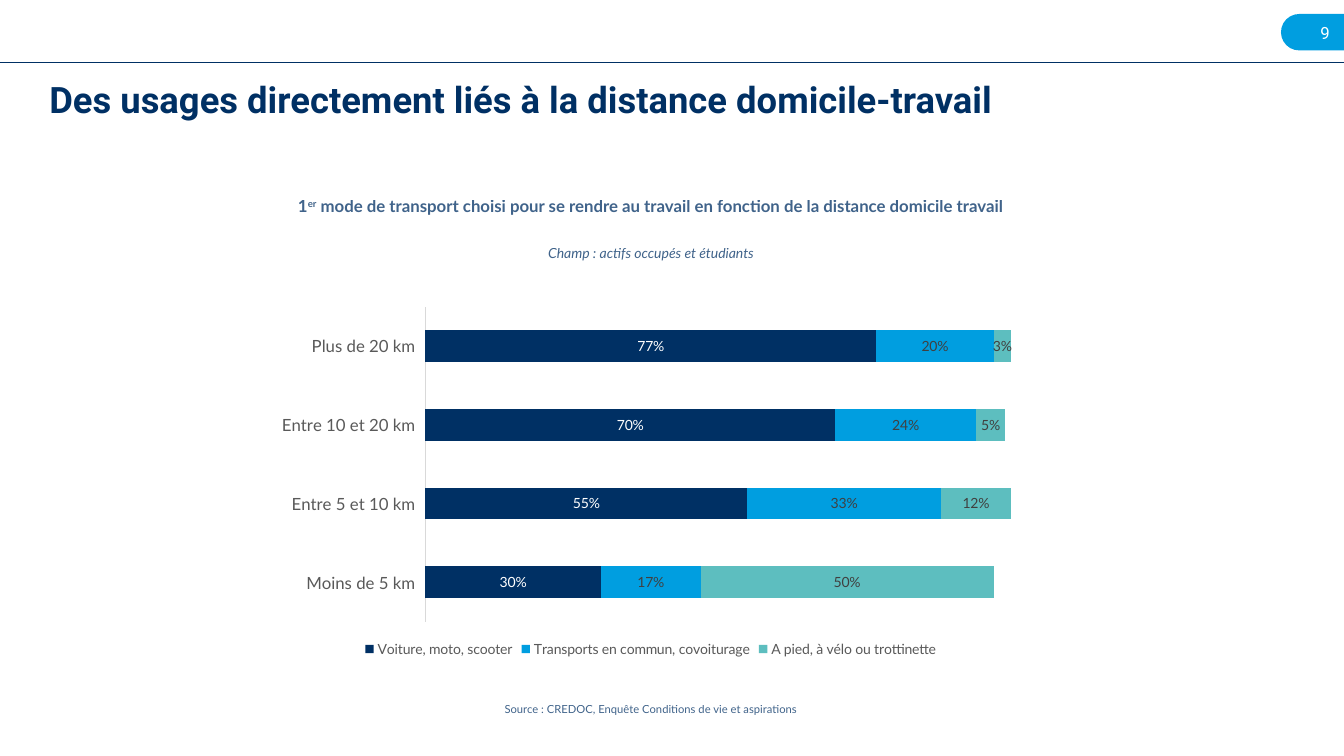
from lxml import etree
from pptx import Presentation
from pptx.chart.data import CategoryChartData
from pptx.dml.color import RGBColor
from pptx.enum.chart import XL_CHART_TYPE, XL_LABEL_POSITION, XL_LEGEND_POSITION, XL_TICK_LABEL_POSITION, XL_TICK_MARK
from pptx.enum.shapes import MSO_CONNECTOR, MSO_SHAPE
from pptx.enum.text import MSO_ANCHOR, PP_ALIGN
from pptx.oxml import parse_xml
from pptx.oxml.ns import nsdecls, qn
from pptx.util import Pt

LEFT, CENTER, RIGHT = PP_ALIGN.LEFT, PP_ALIGN.CENTER, PP_ALIGN.RIGHT
NO_TICK = XL_TICK_MARK.NONE

THEME = {
    "navy": RGBColor(0x00, 0x30, 0x64),
    "blue": RGBColor(0x00, 0x9E, 0xE0),
    "teal": RGBColor(0x5D, 0xBE, 0xBF),
    "white": RGBColor(0xFF, 0xFF, 0xFF),
    "grey": RGBColor(0x59, 0x59, 0x59),
    "dark": RGBColor(0x40, 0x40, 0x40),
    "axis": RGBColor(0xD9, 0xD9, 0xD9),
    "heading": "Roboto",
    "body": "Lato",
    "title_size": Pt(26),
    "label_size": Pt(12),
    "small_size": Pt(10),
    "source_size": Pt(8),
}


def write(sp, *texts, size, font=THEME["body"], color=THEME["navy"], align=CENTER,
          bold=False, italic=False, spacing=0.9, alpha=None, superscript=None):
    tf = sp.text_frame
    tf.word_wrap = True
    tf.vertical_anchor = MSO_ANCHOR.TOP
    p = tf.paragraphs[0]
    p.alignment = align
    p.line_spacing = spacing
    p.space_before = Pt(0)
    for text in texts:
        r = p.add_run()
        r.text = text
        f = r.font
        f.name, f.size, f.bold, f.italic = font, size, bold, italic
        f.color.rgb = color
        rPr = r._r.get_or_add_rPr()
        if text == superscript:
            rPr.set("baseline", "30000")
        if alpha:
            clr = rPr.find(qn("a:solidFill")).find(qn("a:srgbClr"))
            etree.SubElement(clr, qn("a:alpha")).set("val", str(alpha * 1000))


def style(font, size, color):
    font.name, font.size = THEME["body"], size
    font.color.rgb = color


prs = Presentation()
prs.slide_width, prs.slide_height = Pt(960), Pt(540)
s = prs.slides.add_slide(prs.slide_layouts[5])

pill = s.shapes.add_shape(MSO_SHAPE.ROUNDED_RECTANGLE, Pt(915), Pt(10), Pt(145.5), Pt(26))
pill.adjustments[0] = 0.5
pill.shadow.inherit = False
pill.fill.solid()
pill.fill.fore_color.rgb = THEME["blue"]
pill.line.fill.background()

number = s.shapes.add_textbox(Pt(914.5), Pt(13), Pt(42.5), Pt(24))
write(number, "9", size=THEME["label_size"], font=THEME["heading"],
      color=THEME["white"], align=RIGHT, spacing=1.0)

rule = s.shapes.add_connector(MSO_CONNECTOR.STRAIGHT, Pt(0), Pt(44.6), Pt(960), Pt(44.6))
rule.line.color.rgb = THEME["navy"]
rule.line.width = Pt(1)
etree.SubElement(rule._element.spPr, qn("a:effectLst"))

title = s.shapes.title
title.left, title.top, title.width, title.height = Pt(28), Pt(54.7), Pt(885.5), Pt(60.5)
write(title, "Des usages directement liés à la distance domicile-travail",
      size=THEME["title_size"], font=THEME["heading"], align=LEFT, bold=True)

captions = [
    (138, ("1", "er", " mode de transport choisi pour se rendre au travail en fonction de la distance domicile travail"),
     {"size": THEME["label_size"], "bold": True, "superscript": "er"}),
    (172.5, ("Champ : actifs occupés et étudiants",), {"size": THEME["small_size"], "italic": True}),
    (499.5, ("Source : CREDOC, Enquête Conditions de vie et aspirations",), {"size": THEME["source_size"]}),
]
for top, texts, fmt in captions:
    caption = s.shapes.add_textbox(Pt(196), Pt(top), Pt(538), Pt(20))
    write(caption, *texts, alpha=75, **fmt)

cd = CategoryChartData(number_format="0%")
cd.categories = ["Moins de 5 km", "Entre 5 et 10 km", "Entre 10 et 20 km", "Plus de 20 km"]
series = [
    ("Voiture, moto, scooter", (0.30, 0.55, 0.70, 0.77), "navy", "white"),
    ("Transports en commun, covoiturage", (0.17, 0.33, 0.24, 0.20), "blue", "dark"),
    ("A pied, à vélo ou trottinette", (0.50, 0.12, 0.05, 0.03), "teal", "dark"),
]
for name, values, fill, label in series:
    cd.add_series(name, values)

chart = s.shapes.add_chart(XL_CHART_TYPE.BAR_STACKED, Pt(196.5), Pt(214), Pt(536.5), Pt(258.5), cd).chart
style(chart.font, THEME["small_size"], THEME["grey"])
chart.has_title = False
chart.has_legend = True
chart.legend.position = XL_LEGEND_POSITION.BOTTOM
chart.legend.include_in_layout = False
style(chart.legend.font, THEME["small_size"], THEME["grey"])

cat = chart.category_axis
cat.major_tick_mark = cat.minor_tick_mark = NO_TICK
cat.tick_label_position = XL_TICK_LABEL_POSITION.LOW
cat.format.line.color.rgb = THEME["axis"]
cat.format.line.width = Pt(0.75)
style(cat.tick_labels.font, THEME["label_size"], THEME["grey"])

val = chart.value_axis
val.minimum_scale, val.maximum_scale = 0, 1
val.has_major_gridlines = False
val.visible = False

plot = chart.plots[0]
plot.gap_width, plot.overlap = 150, 100
plot.vary_by_categories = False
for ser, (name, values, fill, label) in zip(plot.series, series):
    ser.format.fill.solid()
    ser.format.fill.fore_color.rgb = THEME[fill]
    dl = ser.data_labels
    dl.show_value = True
    dl.number_format, dl.number_format_is_linked = "0%", False
    dl.position = XL_LABEL_POSITION.CENTER
    style(dl.font, THEME["small_size"], THEME[label])

plot_area = chart._chartSpace.chart.plotArea
for old in plot_area.findall(qn("c:layout")):
    plot_area.remove(old)
plot_area.insert(0, parse_xml(
    f'<c:layout {nsdecls("c")}><c:manualLayout><c:layoutTarget val="inner"/>'
    '<c:xMode val="edge"/><c:yMode val="edge"/><c:x val="0.2"/><c:y val="0.02"/>'
    '<c:w val="0.78"/><c:h val="0.87"/></c:manualLayout></c:layout>'))

prs.save("out.pptx")
